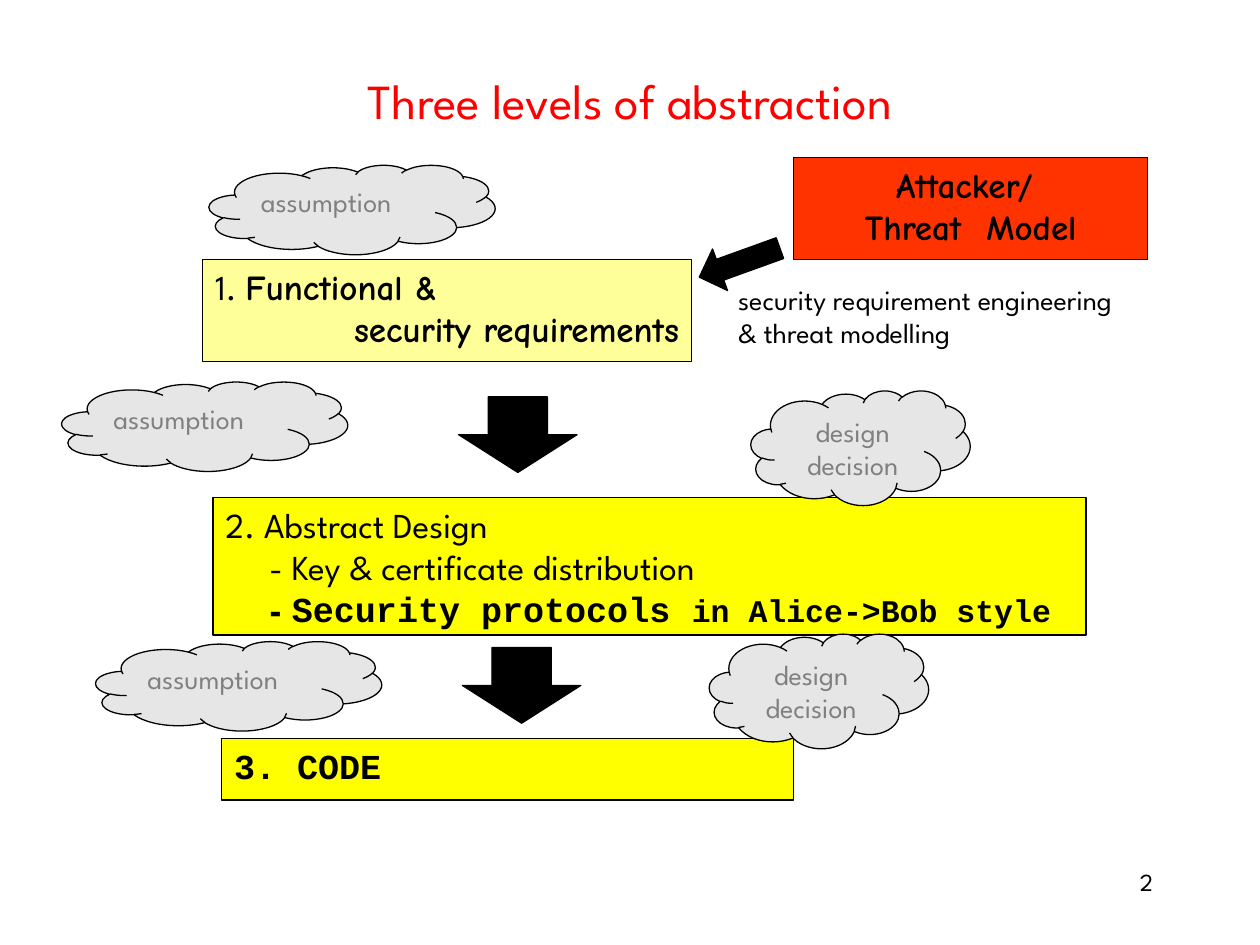
import pptx
import pptx.dml.color
import pptx.enum.shapes
import pptx.enum.text
import pptx.util

Inches = pptx.util.Inches
Pt = pptx.util.Pt
RGBColor = pptx.dml.color.RGBColor
SHAPE = pptx.enum.shapes.MSO_SHAPE
ALIGN = pptx.enum.text.PP_ALIGN
ANCHOR = pptx.enum.text.MSO_ANCHOR

BLACK = RGBColor(0x00, 0x00, 0x00)
RED = RGBColor(0xFF, 0x00, 0x00)
ORANGE_RED = RGBColor(0xFF, 0x33, 0x00)
YELLOW = RGBColor(0xFF, 0xFF, 0x00)
PALE_YELLOW = RGBColor(0xFF, 0xFF, 0x99)
CLOUD_GREY = RGBColor(0xE6, 0xE6, 0xE6)
TEXT_GREY = RGBColor(0x80, 0x80, 0x80)

SANS = "League Spartan"
COMIC = "Comic Neue"
MONO = "Courier New"


def format_run(run, size, font=SANS, color=BLACK, bold=False):
    run.font.size = Pt(size)
    run.font.name = font
    run.font.color.rgb = color
    run.font.bold = bold


def write_line(paragraph, pieces, align=ALIGN.LEFT, indent=0):
    paragraph.alignment = align
    if indent:
        properties = paragraph._p.get_or_add_pPr()
        properties.set("marL", str(Inches(indent)))
        properties.set("indent", "0")
    for text, *style in pieces:
        run = paragraph.add_run()
        run.text = text
        format_run(run, *style)


def write_lines(frame, lines):
    frame.vertical_anchor = ANCHOR.TOP
    for number, line in enumerate(lines):
        paragraph = frame.add_paragraph() if number else frame.paragraphs[0]
        write_line(paragraph, *line)


def add_figure(slide, kind, box, fill, lines=()):
    figure = slide.shapes.add_shape(kind, *map(Inches, box))
    figure.shadow.inherit = False
    figure.fill.solid()
    figure.fill.fore_color.rgb = fill
    figure.line.color.rgb = BLACK
    figure.line.width = Pt(0.75)
    write_lines(figure.text_frame, lines)
    return figure


def add_title(slide, box):
    title = slide.shapes.title
    title.left, title.top, title.width, title.height = map(Inches, box)
    title.text_frame.text = "Three levels of abstraction"
    title.text_frame.vertical_anchor = ANCHOR.MIDDLE
    heading = title.text_frame.paragraphs[0]
    heading.alignment = ALIGN.CENTER
    format_run(heading.runs[0], 28, SANS, RED)


def add_label(slide, box, lines, wrap):
    label = slide.shapes.add_textbox(*map(Inches, box))
    label.text_frame.word_wrap = wrap
    write_lines(label.text_frame, lines)


def add_design(slide, box):
    add_figure(slide, SHAPE.RECTANGLE, box, YELLOW, [
        ([("2. Abstract Design", 20)],),
        ([("- Key & certificate distribution", 20)], ALIGN.LEFT, 0.35),
        ([("- ", 20, SANS, BLACK, True),
          ("Security protocols ", 20, MONO, BLACK, True),
          ("in Alice->Bob style", 18, MONO, BLACK, True)], ALIGN.LEFT, 0.35),
    ])


def add_requirements(slide, box):
    add_figure(slide, SHAPE.RECTANGLE, box, PALE_YELLOW, [
        ([("1. ", 20), ("Functional &", 20, COMIC, BLACK, True)],),
        ([("security requirements", 20, COMIC, BLACK, True)], ALIGN.RIGHT),
    ])


def add_threat_model(slide, box):
    add_figure(slide, SHAPE.RECTANGLE, box, ORANGE_RED, [
        ([(text, 20, COMIC, BLACK, True)], ALIGN.CENTER)
        for text in ("Attacker/ ", "Threat  Model")
    ])


def add_code(slide, box):
    add_figure(slide, SHAPE.RECTANGLE, box, YELLOW,
               [([("3. CODE", 20, MONO, BLACK, True)],)])


def add_arrows(slide):
    for left, top in ((3.64, 3.15), (3.67, 5.14)):
        add_figure(slide, SHAPE.DOWN_ARROW, (left, top, 0.94, 0.6), BLACK)
    threat_arrow = add_figure(slide, SHAPE.LEFT_ARROW, (5.53, 1.91, 0.68, 0.35), BLACK)
    threat_arrow.rotation = 340.2


def add_clouds(slide, text, size, align, corners):
    for corner in corners:
        add_figure(slide, SHAPE.CLOUD, corner + size, CLOUD_GREY,
                   [([(text, 16, SANS, TEXT_GREY)], align)])


def main():
    deck = pptx.Presentation()
    deck.slide_width, deck.slide_height = Inches(10), Inches(7.5)
    slide = deck.slides.add_slide(deck.slide_layouts[5])

    add_title(slide, (0.75, 0.36, 8.5, 0.87))
    add_label(slide, (7.17, 6.83, 2.08, 0.5), [([("2", 14)], ALIGN.RIGHT)], True)
    add_design(slide, (1.69, 3.95, 6.93, 1.09))
    add_requirements(slide, (1.61, 2.06, 3.88, 0.81))
    add_threat_model(slide, (6.3, 1.25, 2.81, 0.81))
    add_code(slide, (1.76, 5.86, 4.54, 0.49))
    add_arrows(slide)
    add_clouds(slide, "assumption", (2.27, 0.71), ALIGN.LEFT,
               [(1.66, 1.31), (0.49, 3.03), (0.76, 5.09)])
    add_clouds(slide, "design decision", (1.74, 0.91), ALIGN.CENTER,
               [(5.96, 3.1), (5.63, 5.03)])
    add_label(slide, (5.76, 2.19, 3.89, 0.64),
              [([("security requirement engineering", 16)],),
               ([("& threat modelling", 16)],)], False)

    deck.save("out.pptx")


if __name__ == "__main__":
    main()
